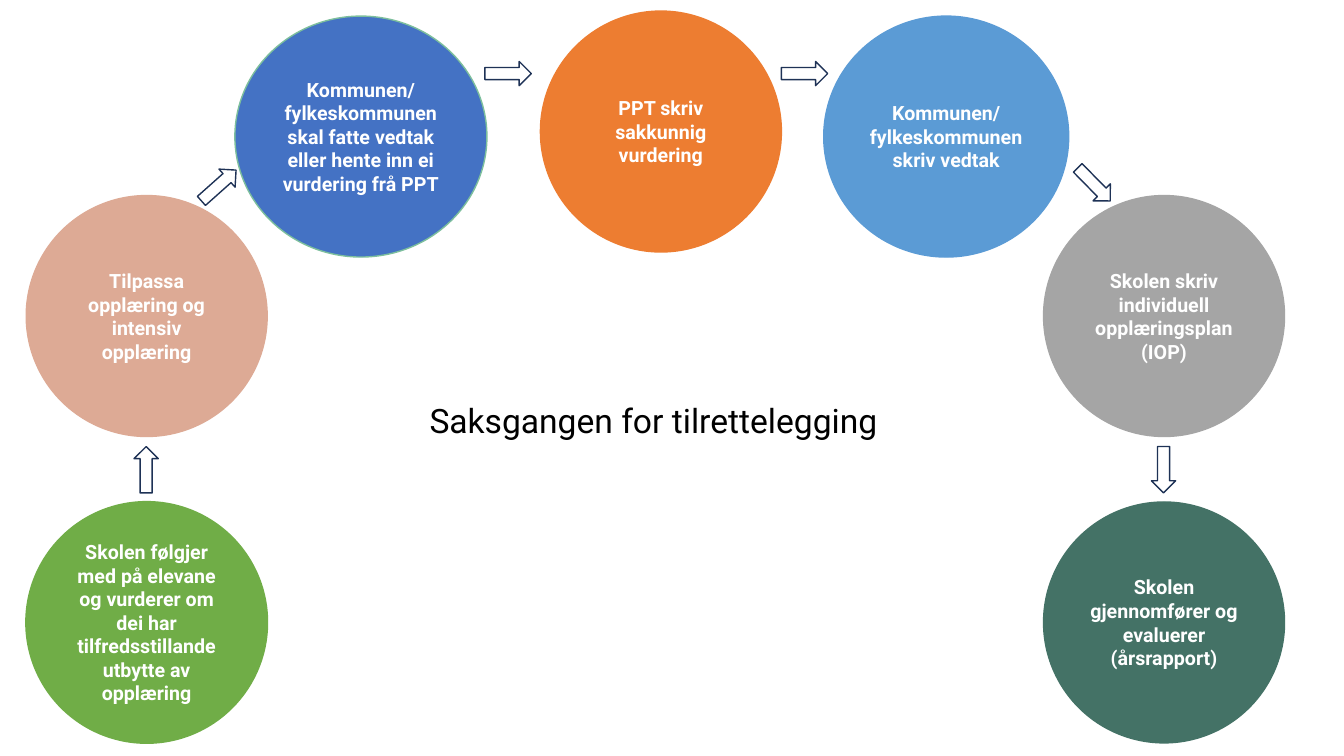
from pptx import Presentation
from pptx.dml.color import RGBColor
from pptx.enum.shapes import MSO_SHAPE as Shape
from pptx.enum.text import MSO_ANCHOR as Anchor, MSO_AUTO_SIZE as Fit, PP_ALIGN as Align
from pptx.util import Inches, Pt

COLORS = {
    "green": "70AD47", "rose": "DDAA95", "blue": "4472C4", "mint": "7DBF9D",
    "orange": "ED7D31", "sky": "5B9BD5", "gray": "A5A5A5", "teal": "447266",
    "navy": "1E3256", "white": "FFFFFF", "black": "000000",
}
SIZE = 2.39
LEFT, RIGHT = 0.26, 10.35
MID, LOW = 1.94, 4.98

# left, top, width, fill, line, line width, text
STEPS = [
    (LEFT, LOW, SIZE, "green", "green", 1.5,
     "Skolen følgjer med på elevane og vurderer om dei har tilfredsstillande utbytte av opplæring"),
    (LEFT, MID, SIZE, "rose", "rose", 1, "Tilpassa opplæring og intensiv opplæring"),
    (2.33, 0.16, 2.5, "blue", "mint", 1,
     "Kommunen/ fylkeskommunen skal fatte vedtak eller hente inn ei vurdering frå PPT"),
    (5.36, 0.11, SIZE, "orange", "orange", 1, "PPT skriv sakkunnig vurdering"),
    (8.17, 0.16, 2.43, "sky", "sky", 1, "Kommunen/ fylkeskommunen skriv vedtak"),
    (RIGHT, MID, SIZE, "gray", "gray", 1, "Skolen skriv individuell opplæringsplan (IOP)"),
    (RIGHT, LOW, SIZE, "teal", "teal", 1, "Skolen gjennomfører og evaluerer (årsrapport)"),
]

# left, top, rotation
ARROWS = [
    (1.22, 4.54, 270), (1.94, 1.72, 318.3), (4.81, 0.61, 0),
    (7.75, 0.61, 0), (10.62, 1.71, 45.5), (11.31, 4.54, 90),
]


class Board:
    """Holds the style and the slide being drawn."""
    font = "Roboto"

    def __init__(self, slide):
        self.slide = slide

    def color(self, name):
        return RGBColor.from_string(COLORS[name])

    def label(self, frame, text, size, color, align, bold=False):
        frame.word_wrap = True
        par = frame.paragraphs[0]
        par.alignment = align
        run = par.add_run()
        run.text = text
        font = run.font
        font.name, font.size, font.bold = self.font, Pt(size), bold
        font.color.rgb = self.color(color)

    def shape(self, kind, box, fill, line, width=1):
        item = self.slide.shapes.add_shape(kind, *map(Inches, box))
        item.shadow.inherit = False
        item.fill.solid()
        item.fill.fore_color.rgb = self.color(fill)
        item.line.color.rgb = self.color(line)
        item.line.width = Pt(width)
        return item

    def step(self, left, top, wide, fill, line, width, text):
        box = (left, top, wide, SIZE)
        frame = self.shape(Shape.FLOWCHART_CONNECTOR, box, fill, line, width).text_frame
        frame.vertical_anchor = Anchor.MIDDLE
        self.label(frame, text, 14, "white", Align.CENTER, True)

    def arrow(self, left, top, turn):
        box = (left, top, 0.46, 0.24)
        self.shape(Shape.RIGHT_ARROW, box, "white", "navy").rotation = turn

    def title(self, text, left, top, wide, high):
        item = self.slide.shapes.title
        item.left, item.top = Inches(left), Inches(top)
        item.width, item.height = Inches(wide), Inches(high)
        frame = item.text_frame
        frame.auto_size = Fit.NONE
        frame.vertical_anchor = Anchor.TOP
        self.label(frame, text, 24, "black", Align.LEFT)


def main():
    deck = Presentation()
    deck.slide_width, deck.slide_height = Inches(13.33), Inches(7.5)
    board = Board(deck.slides.add_slide(deck.slide_layouts[5]))
    for step in STEPS:
        board.step(*step)
    for arrow in ARROWS:
        board.arrow(*arrow)
    board.title("Saksgangen for tilrettelegging", 4.16, 3.92, 4.79, 0.5)
    deck.save("out.pptx")


if __name__ == "__main__":
    main()
